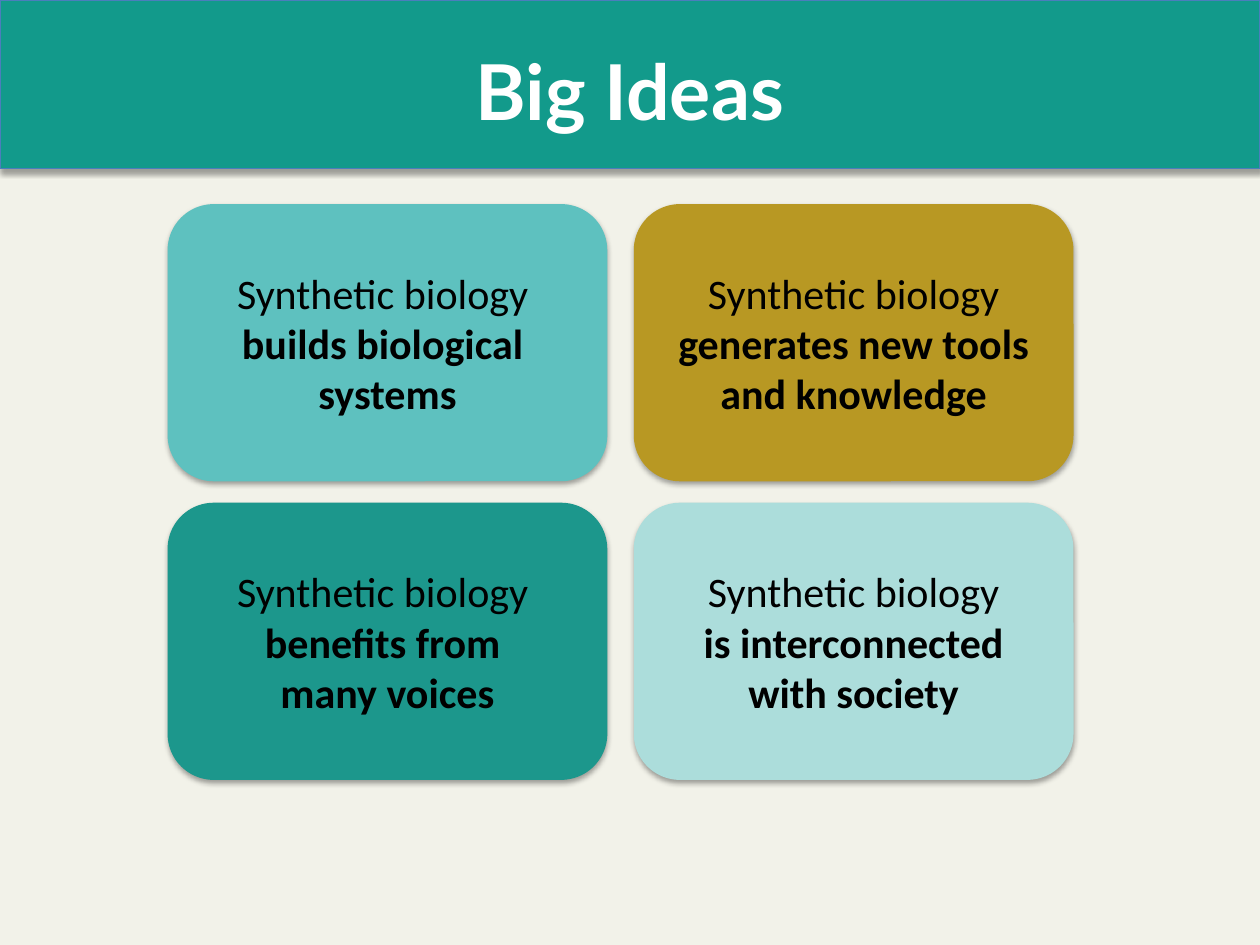
from pptx import Presentation
from pptx.dml.color import RGBColor
from pptx.enum.shapes import MSO_SHAPE
from pptx.enum.text import MSO_ANCHOR, PP_ALIGN
from pptx.util import Inches, Pt

CREAM = RGBColor(0xF2, 0xF2, 0xE9)
TEAL = RGBColor(0x12, 0x9A, 0x8B)
BLUE = RGBColor(0x4B, 0x7E, 0xBC)
AQUA = RGBColor(0x5E, 0xC1, 0xBF)
GOLD = RGBColor(0xB8, 0x98, 0x23)
PALE = RGBColor(0xAC, 0xDD, 0xDB)
DEEP = RGBColor(0x1C, 0x97, 0x8C)
WHITE = RGBColor(0xFF, 0xFF, 0xFF)
BLACK = RGBColor(0, 0, 0)

WIDTH, HEIGHT = 10, 7.5
BANNER_HEIGHT = 1.34
GRID_LEFT, GRID_TOP = 1.33, 1.62
CARD_WIDTH, CARD_HEIGHT = 3.49, 2.2
COLUMN_GAP, ROW_GAP = 0.21, 0.17

IDEAS = [
    (0, 0, AQUA, ["Synthetic biology ", "builds biological ", "systems"]),
    (1, 0, GOLD, ["Synthetic biology", "generates new tools", "and knowledge"]),
    (1, 1, PALE, ["Synthetic biology", "is interconnected", "with society"]),
    (0, 1, DEEP, ["Synthetic biology ", "benefits from ", "many voices"]),
]


class IdeaSlide:
    title_font, title_size = "Lato", Pt(44)
    body_font, body_size = "Calibri", Pt(24)

    def __init__(self, deck):
        self.slide = deck.slides.add_slide(deck.slide_layouts[6])
        self.slide.background.fill.solid()
        self.slide.background.fill.fore_color.rgb = CREAM

    def set_lines(self, frame, lines, name, size, color, plain_lines=0):
        frame.word_wrap = True
        frame.vertical_anchor = MSO_ANCHOR.MIDDLE
        for index, line in enumerate(lines):
            paragraph = frame.add_paragraph() if index else frame.paragraphs[0]
            paragraph.text = line
            paragraph.alignment = PP_ALIGN.CENTER
            font = paragraph.font
            font.name, font.size = name, size
            font.bold = index >= plain_lines
            font.color.rgb = color

    def block(self, preset, left, top, width, height, color):
        shape = self.slide.shapes.add_shape(
            preset, Inches(left), Inches(top), Inches(width), Inches(height))
        shape.fill.solid()
        shape.fill.fore_color.rgb = color
        return shape

    def banner(self):
        band = self.block(MSO_SHAPE.RECTANGLE, 0, 0, WIDTH, BANNER_HEIGHT, TEAL)
        band.line.color.rgb = BLUE
        band.line.width = Pt(0.75)

    def title(self, text):
        heading = self.slide.shapes.add_textbox(
            Inches(0.5), Inches(0.09), Inches(WIDTH - 1), Inches(1.25))
        self.set_lines(
            heading.text_frame, [text], self.title_font, self.title_size, WHITE)

    def card(self, column, row, color, lines):
        left = GRID_LEFT + column * (CARD_WIDTH + COLUMN_GAP)
        top = GRID_TOP + row * (CARD_HEIGHT + ROW_GAP)
        idea = self.block(
            MSO_SHAPE.ROUNDED_RECTANGLE, left, top, CARD_WIDTH, CARD_HEIGHT, color)
        idea.line.fill.background()
        self.set_lines(
            idea.text_frame, lines, self.body_font, self.body_size, BLACK,
            plain_lines=1)


def main():
    deck = Presentation()
    deck.slide_width, deck.slide_height = Inches(WIDTH), Inches(HEIGHT)
    big_ideas = IdeaSlide(deck)
    big_ideas.banner()
    big_ideas.title("Big Ideas")
    for column, row, color, lines in IDEAS:
        big_ideas.card(column, row, color, lines)
    deck.save("out.pptx")


if __name__ == "__main__":
    main()
